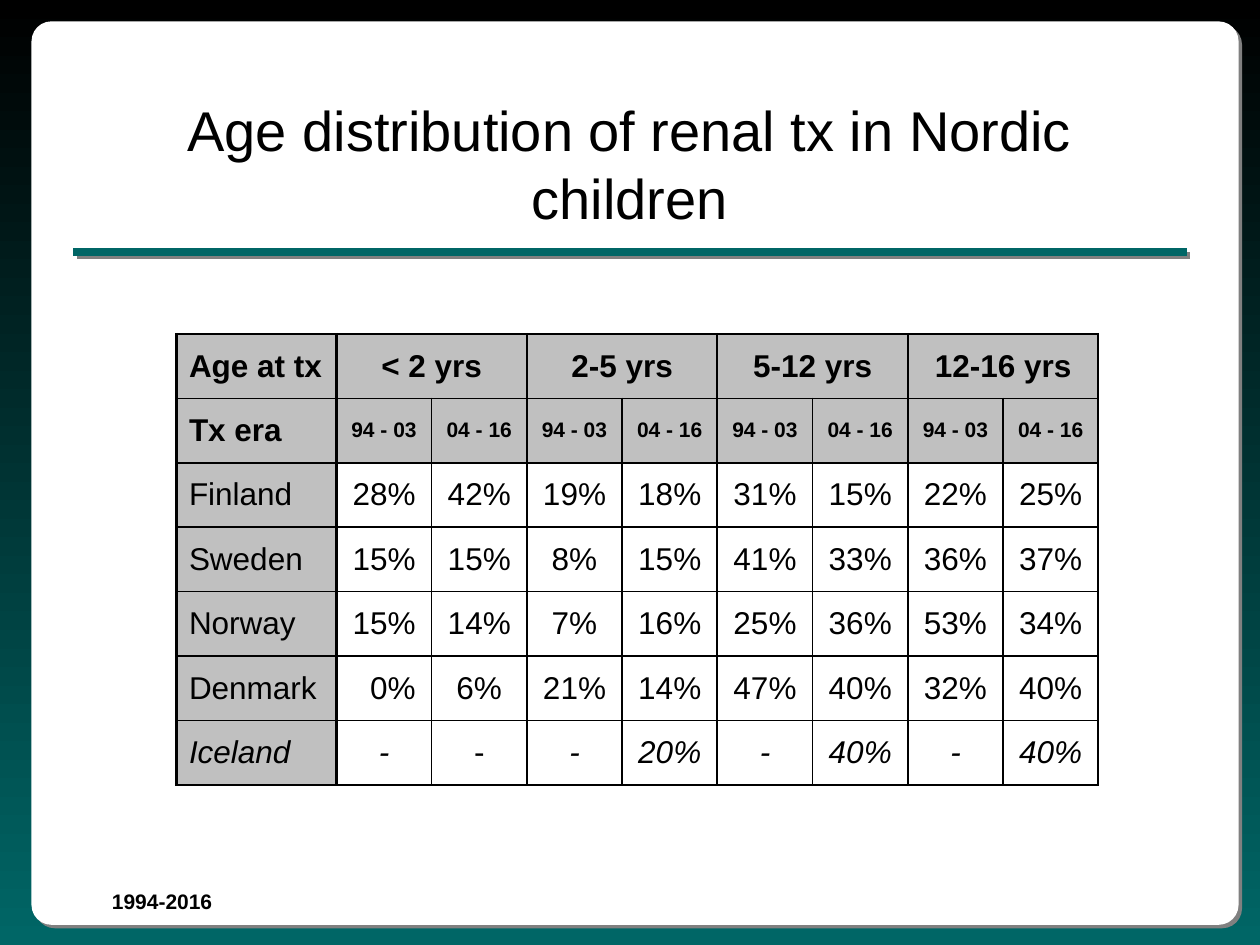
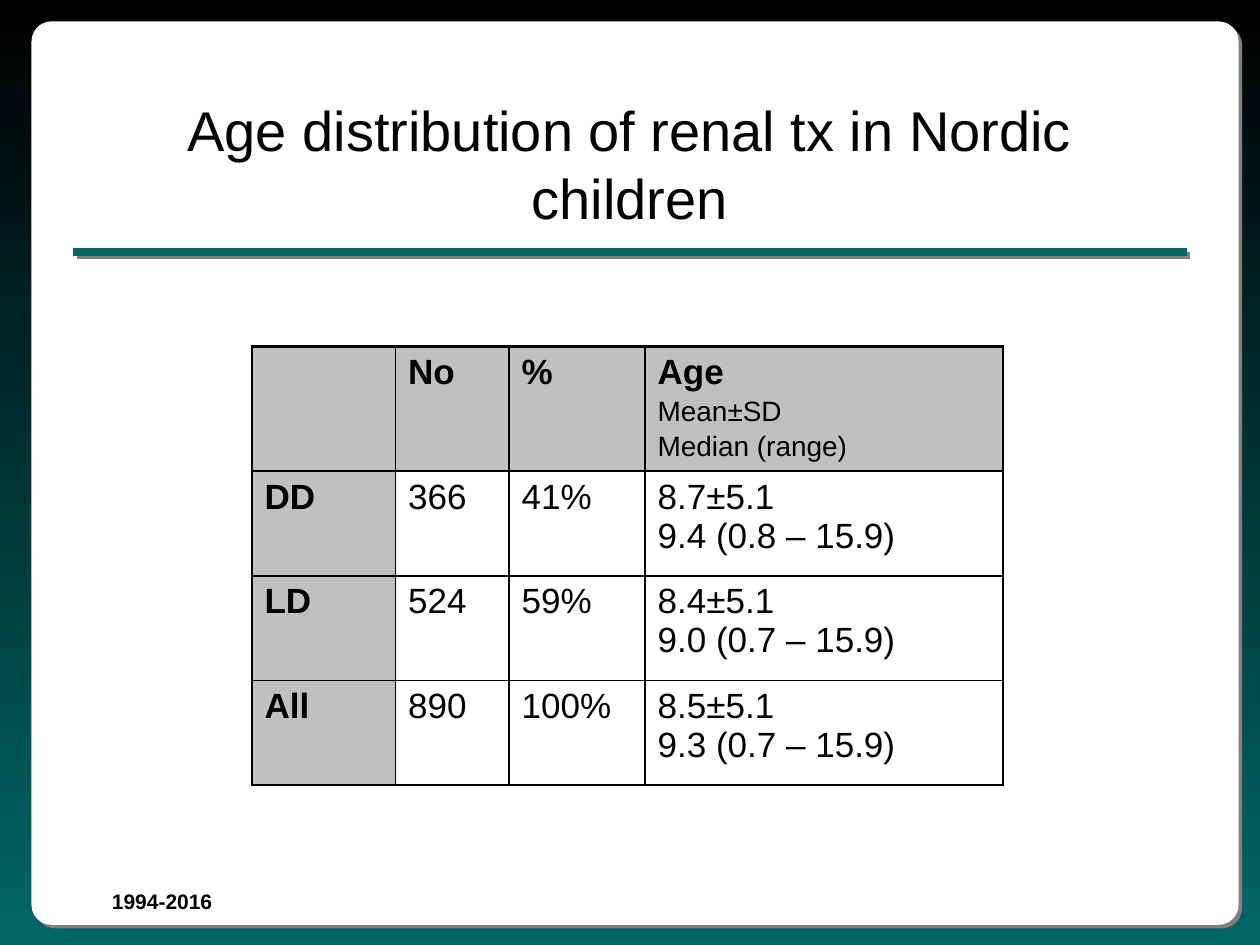
from dataclasses import dataclass

from lxml.etree import SubElement
from pptx import Presentation
from pptx.dml.color import RGBColor
from pptx.enum.shapes import MSO_CONNECTOR, MSO_SHAPE
from pptx.enum.text import MSO_ANCHOR, MSO_AUTO_SIZE, PP_ALIGN
from pptx.oxml.ns import qn
from pptx.oxml.xmlchemy import OxmlElement
from pptx.util import Inches, Pt

COLOURS = {
    "black": "000000",
    "teal": "006666",
    "white": "FFFFFF",
    "header": "C0C0C0",
    "shadow": "808080",
}
FONT = "Arial"
TITLE = "Age distribution of renal tx in Nordic children"
PERIOD = "1994-2016"
THIN, THICK = 1, 1.5


@dataclass(frozen=True)
class Look:
    size: int
    bold: bool = False
    italic: bool = False


@dataclass(frozen=True)
class Entry:
    text: str
    look: Look
    centred: bool = True
    shaded: bool = False
    indent: float = 0.1


@dataclass(frozen=True)
class Grid:
    left: float
    top: float
    widths: list
    heights: list
    anchor: MSO_ANCHOR
    thick_columns: tuple = ()


def colour(name: str) -> RGBColor:
    return RGBColor.from_string(COLOURS[name])


def write(para, text: str, look: Look, align=PP_ALIGN.LEFT) -> None:
    para.alignment = align
    for number, line in enumerate(text.split("\n")):
        if number:
            para.add_line_break()
        span = para.add_run()
        span.text = line
        span.font.name = FONT
        span.font.size = Pt(look.size)
        span.font.bold = look.bold
        span.font.italic = look.italic
        span.font.color.rgb = colour("black")


def add_shadow(shape) -> None:
    properties = shape._element.spPr
    effects = properties.find(qn("a:effectLst"))
    if effects is None:
        effects = SubElement(properties, qn("a:effectLst"))
    shadow = SubElement(effects, qn("a:outerShdw"), dist=str(Pt(2.8)),
                        dir="2700000", algn="ctr", rotWithShape="0")
    SubElement(shadow, qn("a:srgbClr"), val=COLOURS["shadow"])


def add_page(deck):
    page = deck.slides.add_slide(deck.slide_layouts[5])
    backdrop = page.background.fill
    backdrop.gradient()
    backdrop.gradient_angle = 270
    for stop, position, name in zip(backdrop.gradient_stops, (0, 1), ("black", "teal")):
        stop.position = position
        stop.color.rgb = colour(name)

    card = page.shapes.add_shape(MSO_SHAPE.ROUNDED_RECTANGLE, Inches(0.25),
                                 Inches(0.17), Inches(9.58), Inches(7.17))
    card.adjustments[0] = 0.022
    card.fill.solid()
    card.fill.fore_color.rgb = colour("white")
    card.line.fill.background()
    card.shadow.inherit = False
    add_shadow(card)

    period = page.shapes.add_textbox(Inches(0.79), Inches(7), Inches(1.47), Inches(0.3))
    period.text_frame.word_wrap = True
    write(period.text_frame.paragraphs[0], PERIOD, Look(12, bold=True))

    rule = page.shapes.add_connector(MSO_CONNECTOR.STRAIGHT, Inches(0.58), Inches(2),
                                     Inches(9.42), Inches(2))
    rule.line.color.rgb = colour("teal")
    rule.line.width = Pt(4.5)
    add_shadow(rule)

    title = page.shapes.title
    page.shapes._spTree.append(title._element)
    title.left, title.top = Inches(0.75), Inches(0.67)
    title.width, title.height = Inches(8.5), Inches(1.25)
    frame = title.text_frame
    frame.word_wrap = True
    frame.auto_size = MSO_AUTO_SIZE.NONE
    frame.vertical_anchor = MSO_ANCHOR.MIDDLE
    write(frame.paragraphs[0], TITLE, Look(32), PP_ALIGN.CENTER)
    return page


def add_grid(page, grid: Grid):
    table = page.shapes.add_table(
        len(grid.heights), len(grid.widths), Inches(grid.left), Inches(grid.top),
        Inches(sum(grid.widths)), Inches(sum(grid.heights))).table
    table.first_row = False
    table.horz_banding = False
    for column, width in zip(table.columns, grid.widths):
        column.width = Inches(width)
    for row, height in zip(table.rows, grid.heights):
        row.height = Inches(height)
    return table


def set_borders(cell, weights: dict) -> None:
    properties = cell._tc.get_or_add_tcPr()
    for position, (side, weight) in enumerate(weights.items()):
        line = OxmlElement(f"a:ln{side}")
        line.set("w", str(Pt(weight)))
        fill = SubElement(line, qn("a:solidFill"))
        SubElement(fill, qn("a:srgbClr"), val=COLOURS["black"])
        properties.insert(position, line)


def fill_cell(cell, paragraphs: list, anchor) -> None:
    first = paragraphs[0]
    cell.vertical_anchor = anchor
    cell.margin_left = Inches(first.indent)
    if first.shaded:
        cell.fill.solid()
        cell.fill.fore_color.rgb = colour("header")
    else:
        cell.fill.background()
    frame = cell.text_frame
    for number, entry in enumerate(paragraphs):
        para = frame.add_paragraph() if number else frame.paragraphs[0]
        if number:
            para.space_before = Pt(2.5)
        if entry.text:
            align = PP_ALIGN.CENTER if entry.centred else PP_ALIGN.LEFT
            write(para, entry.text, entry.look, align)


def fill_grid(table, grid: Grid, rows: list) -> None:
    row_count, column_count = len(grid.heights), len(grid.widths)
    thick_columns = {0, column_count, *grid.thick_columns}

    for row, entries in enumerate(rows):
        for column, paragraphs in enumerate(entries):
            cell = table.cell(row, column)
            if paragraphs:
                fill_cell(cell, paragraphs, grid.anchor)
            right = column + (cell.span_width if cell.is_merge_origin else 1)
            set_borders(cell, {
                "L": THICK if column in thick_columns else THIN,
                "R": THICK if right in thick_columns else THIN,
                "T": THICK if row == 0 else THIN,
                "B": THICK if row == row_count - 1 else THIN,
            })


def country_row(name: str, shares: str) -> list:
    look = Look(18, italic=name == "Iceland")
    row = [[Entry(name, look, centred=False, shaded=True)]]
    for share in shares.split():
        indent = 0.24 if share == "0%" else 0.1
        row.append([Entry(share, look, indent=indent)])
    return row


def add_country_page(deck) -> None:
    ages = ["< 2 yrs", "2-5 yrs", "5-12 yrs", "12-16 yrs"]
    eras = ["94 - 03", "04 - 16"]
    countries = {
        "Finland": "28% 42% 19% 18% 31% 15% 22% 25%",
        "Sweden": "15% 15% 8% 15% 41% 33% 36% 37%",
        "Norway": "15% 14% 7% 16% 25% 36% 53% 34%",
        "Denmark": "0% 6% 21% 14% 47% 40% 32% 40%",
        "Iceland": "- - - 20% - 40% - 40%",
    }
    heading, small = Look(18, bold=True), Look(12, bold=True)
    age_row = [[Entry("Age at tx", heading, centred=False, shaded=True)]]
    era_row = [[Entry("Tx era", heading, centred=False, shaded=True)]]
    for age in ages:
        age_row += [[Entry(age, heading, shaded=True)], None]
        era_row += [[Entry(era, small, shaded=True)] for era in eras]
    rows = [age_row, era_row]
    rows += [country_row(name, shares) for name, shares in countries.items()]
    rows[-1][2] = [Entry("-", Look(18))]

    share_count = len(ages) * len(eras)
    label_width = 1.27
    share_width = (7.32 - label_width) / share_count
    grid = Grid(1.4, 2.65, [label_width] + [share_width] * share_count,
                [3.58 / len(rows)] * len(rows), MSO_ANCHOR.MIDDLE, (1, 3, 5, 7))
    table = add_grid(add_page(deck), grid)
    for column in range(1, share_count, len(eras)):
        table.cell(0, column).merge(table.cell(0, column + 1))
    fill_grid(table, grid, rows)


def add_donor_page(deck) -> None:
    donors = [
        ("DD", "366", "41%", "8.7±5.1\n9.4 (0.8 – 15.9)"),
        ("LD", "524", "59%", "8.4±5.1\n9.0 (0.7 – 15.9)"),
        ("All", "890", "100%", "8.5±5.1\n9.3 (0.7 – 15.9)"),
    ]
    heading, plain, small = Look(20, bold=True), Look(20), Look(16)
    header = [[Entry(text, heading, centred=False, shaded=True)]
              for text in ("", "No", "%", "Age")]
    header[-1] += [Entry(text, small, centred=False) for text in ("Mean±SD", "Median (range)")]
    rows = [header]
    for donor, *values in donors:
        rows.append([[Entry(donor, heading, centred=False, shaded=True)]]
                    + [[Entry(value, plain, centred=False)] for value in values])

    grid = Grid(2, 2.75, [1.14, 0.9, 1.08, 2.84], [0.99] + [0.83] * len(donors),
                MSO_ANCHOR.TOP)
    fill_grid(add_grid(add_page(deck), grid), grid, rows)


def main() -> None:
    deck = Presentation()
    deck.slide_width, deck.slide_height = Inches(10), Inches(7.5)
    add_country_page(deck)
    add_donor_page(deck)
    deck.save("out.pptx")


if __name__ == "__main__":
    main()
